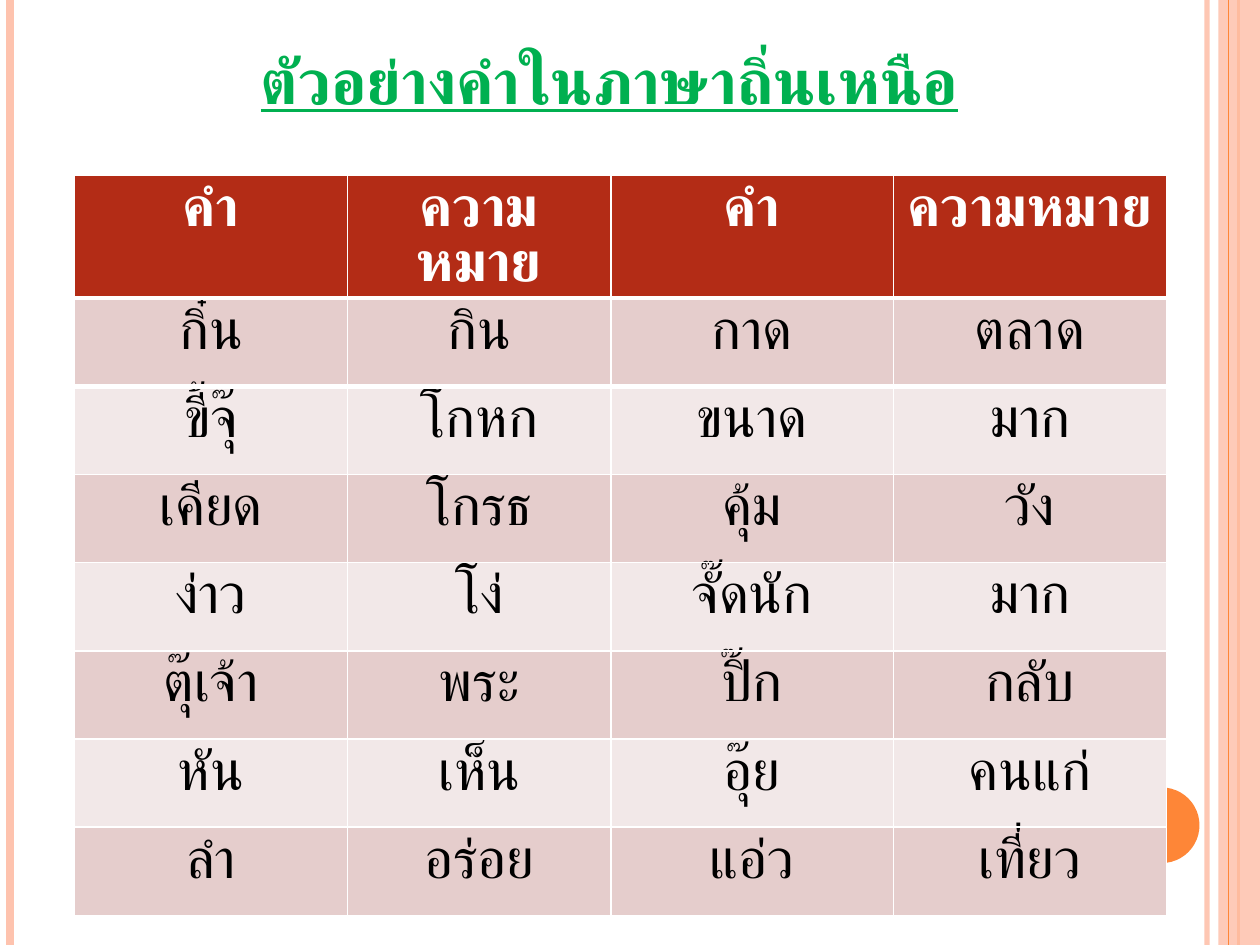
from lxml import etree
from pptx import Presentation, util as u
from pptx.dml.color import RGBColor
from pptx.enum import shapes, text
from pptx.oxml.ns import qn

WIDTH, HEIGHT = 10, 7.5
FONT = "Cambria"
PEACH, ORANGE = "FEC3AE", "FE8637"
GREEN, RED, WHITE, BLACK = "00B050", "B32C16", "FFFFFF", "000000"
BANDS = ["E5CDCC", "F2E8E8"]

TITLE = "ตัวอย่างคำในภาษาถิ่นเหนือ"
COLUMNS = [2.17, 2.09, 2.24, 2.17]
ROW_HEIGHT = 0.7
WORDS = [
    ["คำ", "ความหมาย", "คำ", "ความหมาย"],
    ["กิ๋น", "กิน", "กาด", "ตลาด"],
    ["ขี้จุ๊", "โกหก", "ขนาด", "มาก"],
    ["เคียด", "โกรธ", "คุ้ม", "วัง"],
    ["ง่าว", "โง่", "จั๊ดนัก", "มาก"],
    ["ตุ๊เจ้า", "พระ", "ปิ๊ก", "กลับ"],
    ["หัน", "เห็น", "อุ๊ย", "คนแก่"],
    ["ลำ", "อร่อย", "แอ่ว", "เที่ยว"],
]


def paint(color, value):
    color.rgb = RGBColor.from_string(value)


def set_alpha(properties, percent):
    color = next(properties.iter(qn("a:srgbClr")))
    etree.SubElement(color, qn("a:alpha")).set("val", str(percent * 1000))


def write(frame, words, color, **formats):
    """Write one centred line, with the font also set for Thai script."""
    para = frame.paragraphs[0]
    para.alignment = text.PP_ALIGN.CENTER
    span = para.add_run()
    span.text = words
    for name, value in {"name": FONT, **formats}.items():
        setattr(span.font, name, value)
    paint(span.font.color, color)
    script = etree.SubElement(span._r.get_or_add_rPr(), qn("a:cs"))
    script.set("typeface", FONT)
    return span


def add_rule(page, x, color, weight, alpha=100):
    """Draw a vertical line over the full height of the slide."""
    rule = page.shapes.add_connector(
        shapes.MSO_CONNECTOR.STRAIGHT, u.Inches(x), 0, u.Inches(x), u.Inches(HEIGHT))
    paint(rule.line.color, color)
    rule.line.width = u.Pt(weight)
    properties = rule._element.spPr
    if alpha < 100:
        set_alpha(properties, alpha)
    etree.SubElement(properties, qn("a:effectLst"))


def add_plain(page, kind, box, color, alpha=100):
    shape = page.shapes.add_shape(kind, *map(u.Inches, box))
    shape.shadow.inherit = False
    shape.fill.solid()
    paint(shape.fill.fore_color, color)
    shape.line.fill.background()
    if alpha < 100:
        set_alpha(shape._element.spPr, alpha)


def add_title(page):
    title = page.shapes.title
    place = zip(("left", "top", "width", "height"), (0.75, 0.29, 8.17, 0.69))
    for name, value in place:
        setattr(title, name, u.Inches(value))
    frame = title.text_frame
    frame.auto_size = text.MSO_AUTO_SIZE.NONE
    frame.vertical_anchor = text.MSO_ANCHOR.BOTTOM
    span = write(frame, TITLE, GREEN, size=u.Pt(36), bold=True, underline=True)
    span._r.get_or_add_rPr().set("cap", "small")


def add_border(cell, side, color, weight):
    """Set one cell border; borders come before the fill."""
    border = etree.Element(qn("a:" + side), w=str(u.Pt(weight)))
    fill = etree.SubElement(border, qn("a:solidFill"))
    etree.SubElement(fill, qn("a:srgbClr"), val=color)
    cell._tc.get_or_add_tcPr().insert(0, border)


def add_words(page):
    box = (0.59, 1.39, sum(COLUMNS), ROW_HEIGHT * len(WORDS))
    table = page.shapes.add_table(
        len(WORDS), len(COLUMNS), *map(u.Inches, box)).table
    for column, width in zip(table.columns, COLUMNS):
        column.width = u.Inches(width)
    for r, row in enumerate(WORDS):
        header = r == 0
        for c, word in enumerate(row):
            cell = table.cell(r, c)
            cell.margin_top, cell.margin_bottom = u.Inches(0.08), u.Inches(0.02)
            cell.fill.solid()
            paint(cell.fill.fore_color, RED if header else BANDS[(r - 1) % 2])
            write(cell.text_frame, word, WHITE if header else BLACK,
                  size=u.Pt(32), bold=header)
            cell.text_frame.paragraphs[0].line_spacing = u.Pt(31.5)
            # Thick rule between the header and the first words
            if r < 2:
                add_border(cell, "lnB" if header else "lnT", WHITE, 3)


def main():
    deck = Presentation()
    deck.slide_width, deck.slide_height = u.Inches(WIDTH), u.Inches(HEIGHT)
    page = deck.slides.add_slide(deck.slide_layouts.get_by_name("Title Only"))

    # Side stripes and the round marker
    add_rule(page, 9.58, PEACH, 3, alpha=93)
    add_rule(page, 0.08, PEACH, 4.5)
    add_rule(page, 9.83, ORANGE, 1.5)
    add_plain(page, shapes.MSO_SHAPE.RECTANGLE, (9.67, 0, 0.33, HEIGHT), PEACH, alpha=87)
    add_rule(page, 9.75, ORANGE, 0.75)
    add_plain(page, shapes.MSO_SHAPE.OVAL, (8.92, 6.25, 0.6, 0.6), ORANGE)

    # Heading and word list
    add_title(page)
    add_words(page)
    deck.save("out.pptx")


if __name__ == "__main__":
    main()
